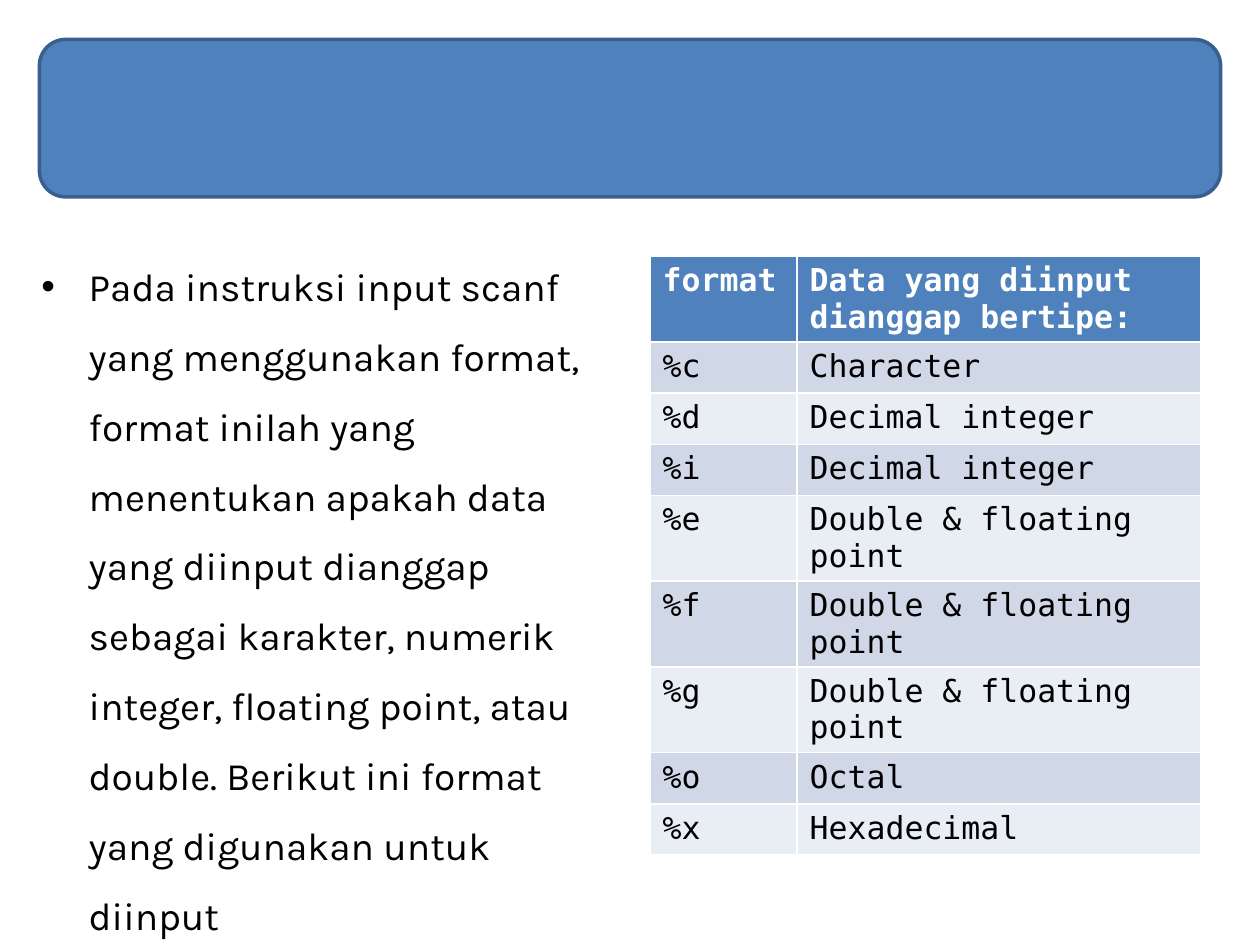
import pptx
import pptx.dml.color
import pptx.enum.shapes
import pptx.enum.text
import pptx.util

Pt = pptx.util.Pt
COLORS = {
    "accent": "4F81BD",
    "outline": "3A5F8C",
    "dark_band": "D0D8E8",
    "light_band": "E9EDF4",
    "text": "000000",
    "heading": "FFFFFF",
}


def rgb(name):
    return pptx.dml.color.RGBColor.from_string(COLORS[name])


def style_text(paragraph, font_name, size, color, bold=False):
    for run in paragraph.runs:
        run.font.name = font_name
        run.font.size = Pt(size)
        run.font.color.rgb = rgb(color)
        run.font.bold = bold


deck = pptx.Presentation()
deck.slide_width, deck.slide_height = Pt(720), Pt(540)
slide = deck.slides.add_slide(deck.slide_layouts[1])
unused_title = slide.shapes.title.element
unused_title.getparent().remove(unused_title)

banner = slide.shapes.add_shape(
    pptx.enum.shapes.MSO_SHAPE.ROUNDED_RECTANGLE, Pt(22.5), Pt(22.5), Pt(675), Pt(90)
)
banner.shadow.inherit = False
banner.fill.solid()
banner.fill.fore_color.rgb = rgb("accent")
banner.line.color.rgb = rgb("outline")
banner.line.width = Pt(2)

explanation = slide.placeholders[1]
explanation.left, explanation.top = Pt(16.5), Pt(133)
explanation.width, explanation.height = Pt(335.5), Pt(356.5)
explanation.text_frame.text = (
    "Pada instruksi input scanf yang menggunakan format, format inilah yang "
    "menentukan apakah data yang diinput dianggap sebagai karakter, numerik integer, "
    "floating point, atau double. Berikut ini format yang digunakan untuk diinput"
)
explanation.text_frame.auto_size = pptx.enum.text.MSO_AUTO_SIZE.NONE
explanation.text_frame.paragraphs[0].line_spacing = 1.5
style_text(explanation.text_frame.paragraphs[0], "Karla", 22.2, "text")

formats = [
    ("format", "Data yang diinput dianggap bertipe:"),
    ("%c", "Character"),
    ("%d", "Decimal integer"),
    ("%i", "Decimal integer"),
    ("%e", "Double & floating point"),
    ("%f", "Double & floating point"),
    ("%g", "Double & floating point"),
    ("%o", "Octal"),
    ("%x", "Hexadecimal"),
]
row_height = 29.2
format_table = slide.shapes.add_table(
    len(formats), 2, Pt(371.5), Pt(146.5), Pt(314.5), Pt(row_height * len(formats))
).table
format_table.columns[0].width = Pt(84)
format_table.columns[1].width = Pt(230.5)

for row, entries in enumerate(formats):
    format_table.rows[row].height = Pt(row_height)
    is_header = row == 0
    band = "accent" if is_header else "dark_band" if row % 2 else "light_band"
    for column, entry in enumerate(entries):
        cell = format_table.cell(row, column)
        cell.text_frame.text = entry
        cell.fill.solid()
        cell.fill.fore_color.rgb = rgb(band)
        style_text(
            cell.text_frame.paragraphs[0],
            "DejaVu Sans Mono",
            18,
            "heading" if is_header else "text",
            is_header,
        )

deck.save("out.pptx")
